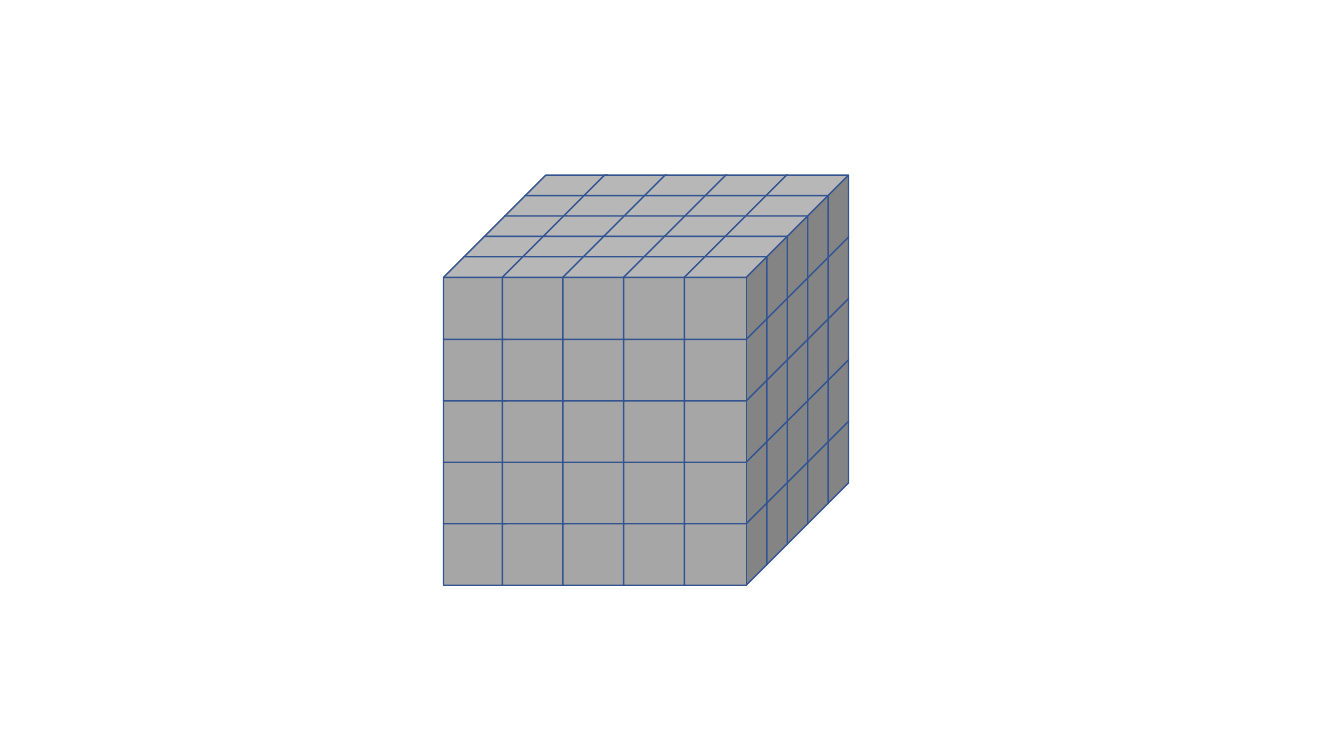
from itertools import product

from pptx import Presentation
from pptx.dml.color import RGBColor
from pptx.enum.shapes import MSO_SHAPE
from pptx.util import Pt

CUBE = MSO_SHAPE.CUBE

THEME = {
    "fill": RGBColor(0xA6, 0xA6, 0xA6),
    "line": RGBColor(0x32, 0x54, 0x91),
    "line_width": 1,
}

SLIDE_SIZE = (960, 540)
LAYERS = 5
ROWS = 5
COLUMN_OFFSETS = (0, 42, 85.2, 128.6, 172)
CUBE_SIZE = 59
FRONT_LEFT = 316.8  # front row, first column
BOTTOM_TOP = 359  # front row of the bottom layer
LAYER_STEP = 43.9
DEPTH_STEP = 14.57


def is_visible(layer, row, column):
    """Only the top, front and right faces of the block can be seen."""
    return layer == LAYERS - 1 or row == 0 or column == len(COLUMN_OFFSETS) - 1


def add_cube(layer_group, left, top):
    cube = layer_group.shapes.add_shape(
        CUBE, Pt(left), Pt(top), Pt(CUBE_SIZE), Pt(CUBE_SIZE))
    cube.shadow.inherit = False
    cube.fill.solid()
    cube.fill.fore_color.rgb = THEME["fill"]
    cube.line.color.rgb = THEME["line"]
    cube.line.width = Pt(THEME["line_width"])


def add_layer(page, layer):
    """Stack one layer, from its back row to its front row."""
    layer_group = page.shapes.add_group_shape()
    for row, column in product(reversed(range(ROWS)), range(len(COLUMN_OFFSETS))):
        if is_visible(layer, row, column):
            depth = row * DEPTH_STEP
            left = FRONT_LEFT + COLUMN_OFFSETS[column] + depth
            top = BOTTOM_TOP - layer * LAYER_STEP - depth
            add_cube(layer_group, left, top)


def main():
    deck = Presentation()
    deck.slide_width, deck.slide_height = map(Pt, SLIDE_SIZE)
    page = deck.slides.add_slide(deck.slide_layouts[6])
    for layer in range(LAYERS):
        add_layer(page, layer)
    deck.save("out.pptx")


if __name__ == "__main__":
    main()
